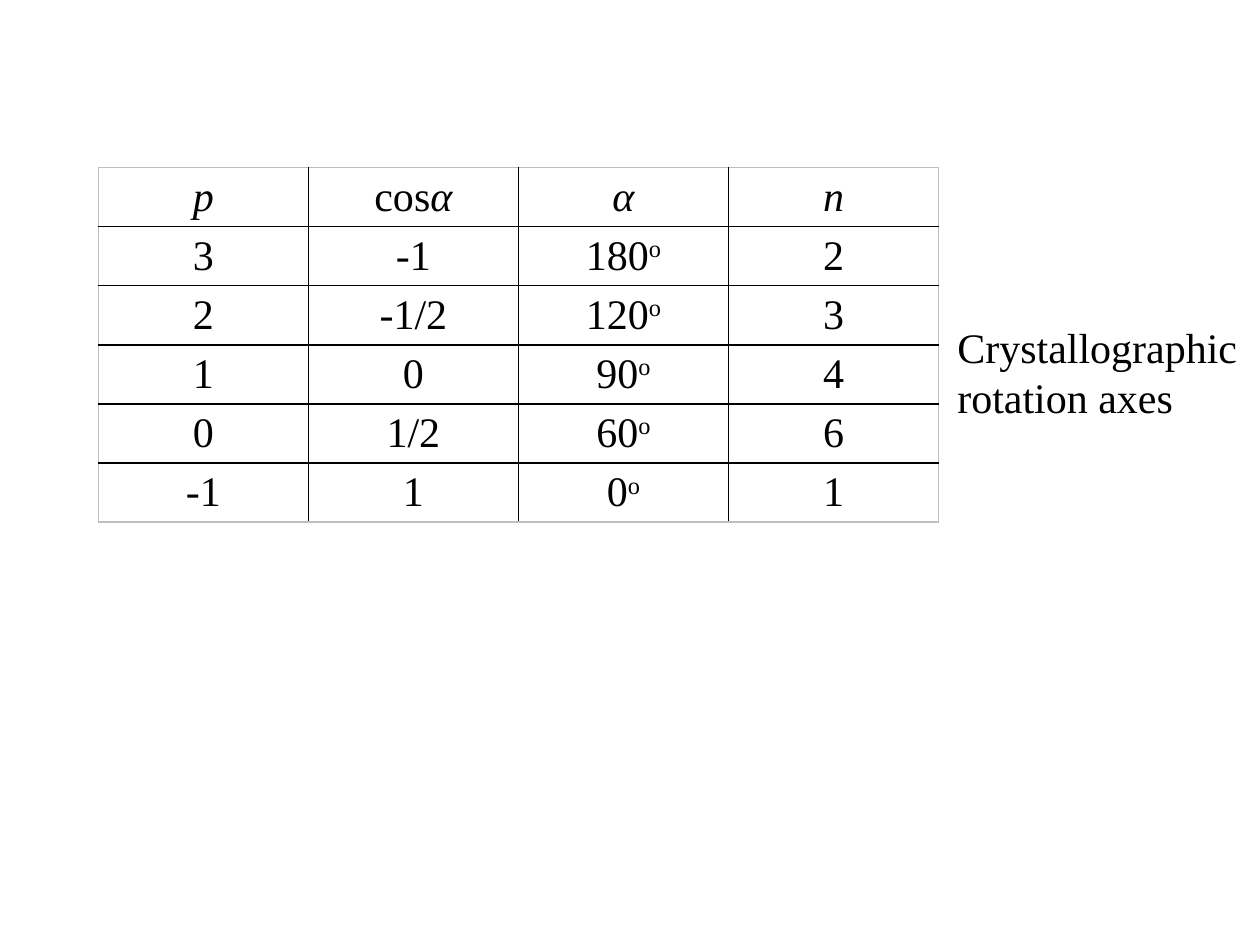
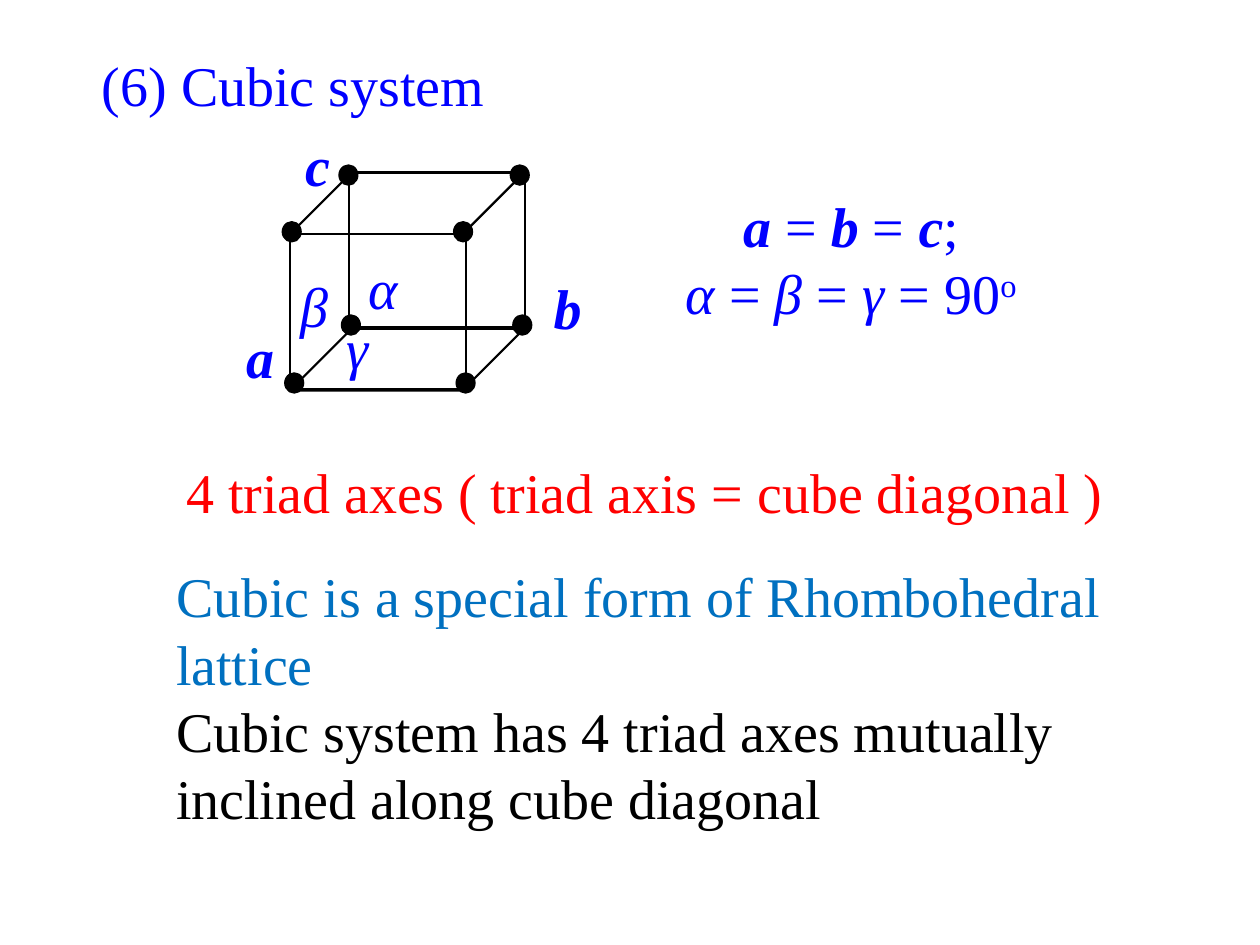
from dataclasses import dataclass
from typing import NamedTuple, Optional

from lxml.etree import SubElement as Sub
from pptx import Presentation as Deck
from pptx.dml.color import RGBColor as Rgb
from pptx.enum.shapes import MSO_SHAPE as Kind
from pptx.enum.text import MSO_AUTO_SIZE as Fit
from pptx.enum.text import PP_ALIGN as Align
from pptx.oxml.ns import qn
from pptx.util import Pt

SCALE = 9144


@dataclass(frozen=True)
class Theme:
    font: str = "Times New Roman"
    black: str = "000000"
    white: str = "FFFFFF"
    blue: str = "0000FF"
    red: str = "FF0000"
    azure: str = "0070C0"
    grey: str = "BFBFBF"
    small: int = 24
    large: int = 32
    edge: float = 1.25
    ring: float = 0.75
    rule: float = 1.0


class Bit(NamedTuple):
    text: str
    style: str = ""
    color: Optional[str] = None


class Box(NamedTuple):
    left: int
    top: int
    width: int
    height: int

    def emu(self) -> list:
        return [px(side) for side in self]


class Label(NamedTuple):
    box: Box
    text: str
    style: str


class Face(NamedTuple):
    kind: Kind
    box: Box
    fill: Optional[str]


THEME = Theme()
DEGREE = Bit("o", "^")
HEAD = [
    [Bit("p", "i")],
    [Bit("cos"), Bit("α", "i")],
    [Bit("α", "i")],
    [Bit("n", "i")],
]
AXES = [
    ("3", "-1", "180", "2"),
    ("2", "-1/2", "120", "3"),
    ("1", "0", "90", "4"),
    ("0", "1/2", "60", "6"),
    ("-1", "1", "0", "1"),
]
FACES = [
    Face(Kind.PARALLELOGRAM, Box(230, 137, 186, 49), THEME.white),
    Face(Kind.RECTANGLE, Box(230, 186, 140, 123), THEME.white),
    Face(Kind.RECTANGLE, Box(277, 137, 140, 123), None),
    Face(Kind.PARALLELOGRAM, Box(230, 261, 186, 49), None),
]
NODES = [(269, 131), (224, 176), (271, 250), (226, 296)]
NODE_STEP = 136
LABELS = [
    Label(Box(429, 212, 43, 64), "b", "bi"),
    Label(Box(185, 251, 43, 64), "a", "bi"),
    Label(Box(232, 99, 40, 64), "c", "bi"),
    Label(Box(280, 196, 49, 64), "α", "i"),
    Label(Box(264, 244, 39, 64), "γ", "i"),
    Label(Box(227, 211, 45, 64), "β", "i"),
]


def px(count: int) -> int:
    return count * SCALE


def write(frame, lines: list, *, size: int = THEME.large,
          color: str = THEME.black, align: Align = Align.LEFT) -> None:
    for row, bits in enumerate(lines):
        para = frame.add_paragraph() if row else frame.paragraphs[0]
        para.alignment = align
        for bit in bits:
            run = para.add_run()
            run.text = bit.text
            font = run.font
            font.name, font.size = THEME.font, Pt(size)
            font.bold, font.italic = "b" in bit.style, "i" in bit.style
            font.color.rgb = Rgb.from_string(bit.color or color)
            if "^" in bit.style:
                run._r.get_or_add_rPr().set("baseline", "30000")


def note(slide, box: Box, lines: list, *, wrap: bool = False, **style) -> None:
    frame = slide.shapes.add_textbox(*box.emu()).text_frame
    frame.word_wrap = wrap
    frame.auto_size = Fit.SHAPE_TO_FIT_TEXT
    write(frame, lines, **style)


def draw(group, kind: Kind, box: Box, fill: Optional[str], width: float):
    shape = group.shapes.add_shape(kind, *box.emu())
    shape.shadow.inherit = False
    if fill:
        shape.fill.solid()
        shape.fill.fore_color.rgb = Rgb.from_string(fill)
    else:
        shape.fill.background()
    shape.line.color.rgb = Rgb.from_string(THEME.black)
    shape.line.width = Pt(width)
    return shape


def border(cell, side: str, color: str) -> None:
    line = Sub(cell._tc.get_or_add_tcPr(), qn(f"a:{side}"),
               w=str(Pt(THEME.rule)))
    Sub(Sub(line, qn("a:solidFill")), qn("a:srgbClr"), val=color)


def axis_table(slide) -> None:
    rows = [HEAD]
    for order, cosine, angle, fold in AXES:
        rows.append([[Bit(order)], [Bit(cosine)],
                     [Bit(angle), DEGREE], [Bit(fold)]])
    box = Box(78, 133, 667, 300)
    holder = slide.shapes.add_table(len(rows), len(HEAD), *box.emu())
    table = holder.table
    table.first_row = table.horz_banding = False
    last_row, last_col = len(rows) - 1, len(HEAD) - 1
    for y, row in enumerate(rows):
        table.rows[y].height = px(41)
        for x, bits in enumerate(row):
            cell = table.cell(y, x)
            write(cell.text_frame, [bits], size=THEME.small,
                  align=Align.CENTER)
            outer = {"lnL": x == 0, "lnR": x == last_col,
                     "lnT": y == 0, "lnB": y == last_row}
            for side, rim in outer.items():
                border(cell, side, THEME.grey if rim else THEME.black)
            cell.fill.background()
    holder.height = px(box.height)


def cube(slide) -> None:
    group = slide.shapes.add_group_shape()
    for face in FACES:
        shape = draw(group, face.kind, face.box, face.fill, THEME.edge)
        if face.kind == Kind.PARALLELOGRAM:
            shape.adjustments[0] = 1
    for left, top in NODES:
        for shift in (0, NODE_STEP):
            draw(group, Kind.OVAL, Box(left + shift, top, 15, 16),
                 THEME.black, THEME.ring)
    for label in LABELS:
        note(slide, label.box, [[Bit(label.text, label.style)]],
             color=THEME.blue, align=Align.CENTER)


def axis_slide(slide) -> None:
    axis_table(slide)
    note(slide, Box(750, 250, 244, 91),
         [[Bit("Crystallographic")], [Bit("rotation axes")]],
         size=THEME.small)


def cubic_slide(slide) -> None:
    note(slide, Box(71, 35, 327, 64), [[Bit("(6) Cubic system")]],
         color=THEME.blue)
    note(slide, Box(138, 358, 755, 64),
         [[Bit("4 triad axes ( triad axis = cube diagonal )")]],
         color=THEME.red)
    note(slide, Box(130, 441, 814, 226), [
        [Bit("Cubic is a special form of Rhombohedral lattice",
             color=THEME.azure)],
        [Bit("Cubic system has 4 triad axes mutually inclined "
             "along cube diagonal")],
    ], wrap=True)
    cube(slide)
    note(slide, Box(528, 147, 295, 118), [
        [Bit("a", "bi"), Bit(" = "), Bit("b ", "bi"), Bit("= "),
         Bit("c", "bi"), Bit(";")],
        [Bit("α", "i"), Bit(" = "), Bit("β", "i"), Bit(" = "),
         Bit("γ ", "i"), Bit("= 90"), DEGREE],
    ], color=THEME.blue, align=Align.CENTER)


def main() -> None:
    deck = Deck()
    deck.slide_width, deck.slide_height = px(1000), px(750)
    for build in (axis_slide, cubic_slide):
        build(deck.slides.add_slide(deck.slide_layouts[6]))
    deck.save("out.pptx")


if __name__ == "__main__":
    main()
